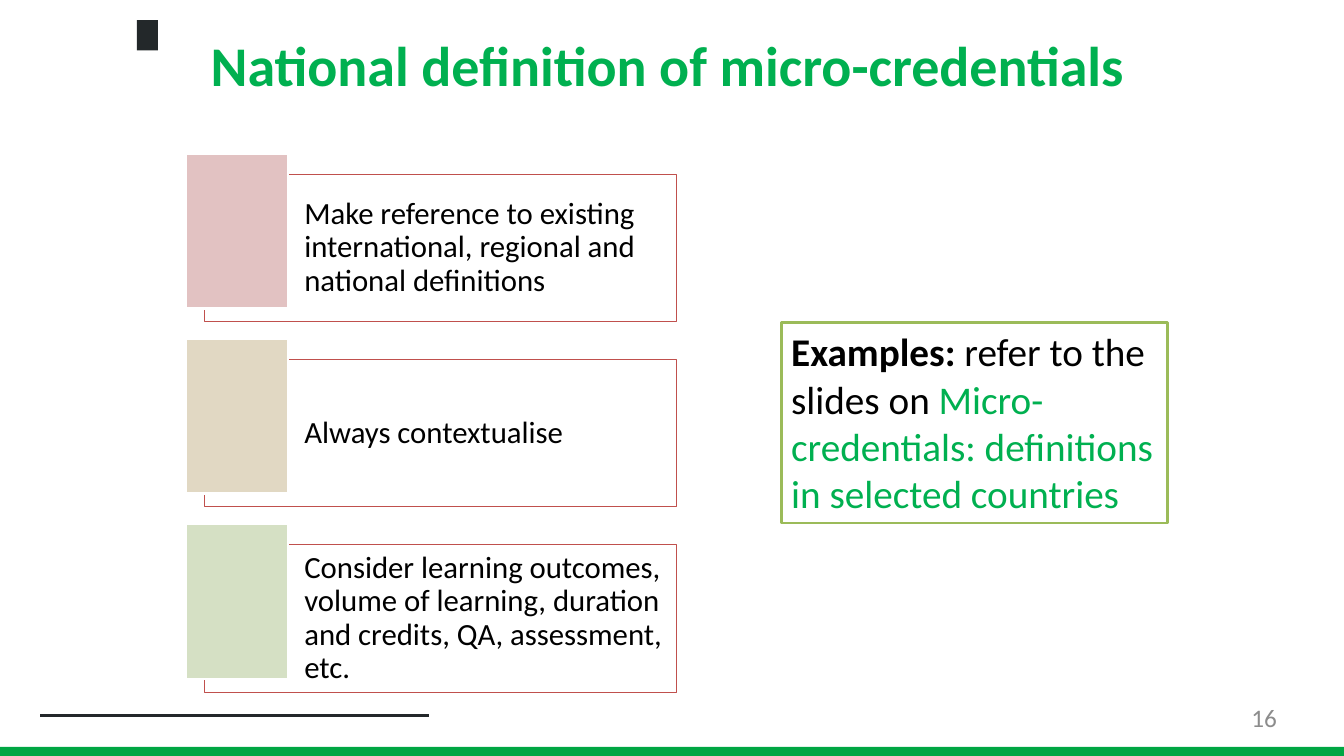
"""Build the slide on the national definition of micro-credentials."""
from lxml.etree import SubElement
from pptx import Presentation
from pptx.dml.color import RGBColor
from pptx.enum.shapes import MSO_CONNECTOR, MSO_SHAPE
from pptx.enum.text import MSO_ANCHOR, PP_ALIGN
from pptx.oxml.ns import qn
from pptx.util import Cm, Pt

TITLE = "National definition of micro-credentials"
CARDS = [
    ("Make reference to existing international, regional and national definitions", "rose"),
    ("Always contextualise", "sand"),
    ("Consider learning outcomes, volume of learning, duration and credits, QA, "
     "assessment, etc.", "sage"),
]
EXAMPLES = [
    ("Examples: ", "black", True),
    ("refer to the slides on ", "black", False),
    ("Micro-credentials: definitions in selected countries", "green", False),
]
PAGE = "16"
COLORS = {
    "white": "FFFFFF", "black": "000000", "green": "00B050", "bar": "00A643",
    "ink": "23282A", "red": "C0504D", "olive": "9BBB59", "grey": "8C8C8C",
    "rose": "E2C2C2", "sand": "E1D8C3", "sage": "D5E0C4",
}
FONT = "Calibri"
WIDTH, HEIGHT = 33.87, 19.05
CARD_LEFT, CARD_TOP, CARD_W, CARD_H = 5.16, 4.39, 11.89, 3.71
TILE_LEFT, TILE_TOP, TILE_W, TILE_H = 4.67, 3.86, 2.59, 3.91
PITCH = 4.67


def rgb(name):
    return RGBColor.from_string(COLORS[name])


def add_box(s, box, fill, line=None, weight=1):
    sp = s.shapes.add_shape(MSO_SHAPE.RECTANGLE, *map(Cm, box))
    sp.shadow.inherit = False
    sp.fill.solid()
    sp.fill.fore_color.rgb = rgb(fill)
    if line:
        sp.line.color.rgb = rgb(line)
        sp.line.width = Pt(weight)
    else:
        sp.line.fill.background()
    return sp


def write(sp, runs, size, insets, align=PP_ALIGN.LEFT, anchor=MSO_ANCHOR.TOP, spacing=None):
    tf = sp.text_frame
    tf.word_wrap = True
    tf.vertical_anchor = anchor
    tf.margin_left, tf.margin_top, tf.margin_right, tf.margin_bottom = map(Cm, insets)
    p = tf.paragraphs[0]
    p.alignment = align
    p.line_spacing = spacing
    for text, color, bold in runs:
        r = p.add_run()
        r.text = text
        r.font.name = FONT
        r.font.size = Pt(size)
        r.font.bold = bold
        r.font.color.rgb = rgb(color)


def add_frame(s):
    rule = s.shapes.add_connector(
        MSO_CONNECTOR.STRAIGHT, Cm(1.02), Cm(18.03), Cm(10.8), Cm(18.03))
    rule.line.color.rgb = rgb("ink")
    rule.line.width = Pt(1.5)
    SubElement(rule._element.spPr, qn("a:effectLst"))
    add_box(s, (3.45, 0.51, 0.53, 0.76), "ink")
    add_box(s, (0, 18.82, WIDTH, 0.23), "bar")
    title = add_box(s, (5.08, 0.64, 26.77, 1.85), "white", "white", 0.5)
    write(title, [(TITLE, "green", True)], 40, (0.23, 0, 0, 0), spacing=Pt(51.6))


def add_cards(s):
    for i, (text, tint) in enumerate(CARDS):
        card = add_box(s, (CARD_LEFT, CARD_TOP + i * PITCH, CARD_W, CARD_H),
                       "white", "red", 0.75)
        write(card, [(text, "black", False)], 22, (2.51, 0.23, 0.23, 0.23),
              anchor=MSO_ANCHOR.MIDDLE, spacing=0.9)
        add_box(s, (TILE_LEFT, TILE_TOP + i * PITCH, TILE_W, TILE_H), tint, "white", 2)


def main():
    prs = Presentation()
    prs.slide_width, prs.slide_height = Cm(WIDTH), Cm(HEIGHT)
    s = prs.slides.add_slide(prs.slide_layouts[6])
    add_frame(s)
    add_cards(s)
    examples = add_box(s, (19.69, 8.13, 9.73, 5.05), "white", "olive", 2)
    write(examples, EXAMPLES, 28, (0.25, 0.13, 0.25, 0.13))
    number = s.shapes.add_textbox(Cm(24.38), Cm(17.7), Cm(7.8), Cm(0.97))
    write(number, [(PAGE, "grey", False)], 18, (0, 0, 0, 0), PP_ALIGN.RIGHT)
    prs.save("out.pptx")


if __name__ == "__main__":
    main()
